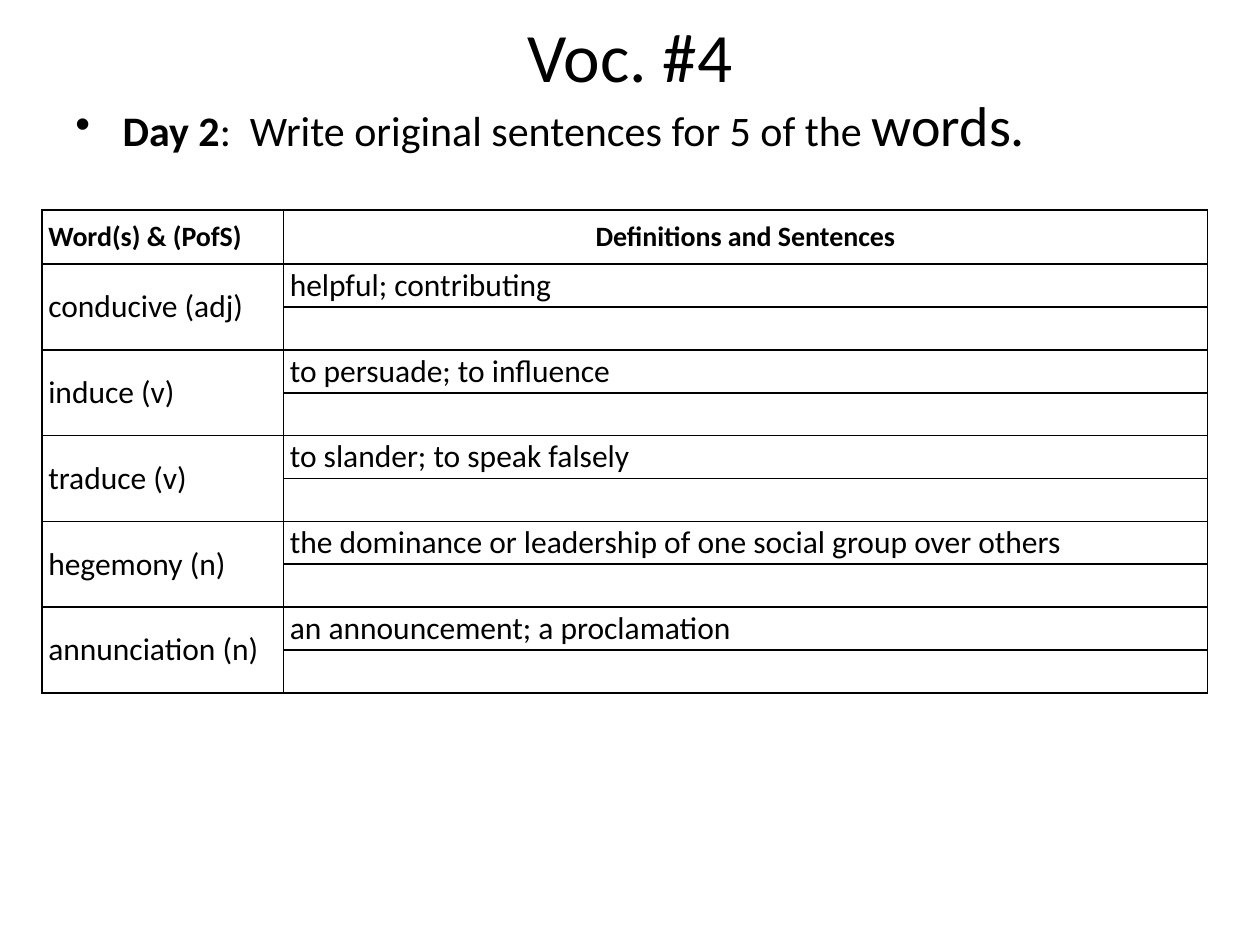
from dataclasses import dataclass

import lxml.etree
import pptx
import pptx.dml.color
import pptx.enum.text
import pptx.oxml
import pptx.oxml.ns
import pptx.util

FONT = "Calibri"
BLACK = "000000"
ALIGN = pptx.enum.text.PP_ALIGN
ANCHOR = pptx.enum.text.MSO_ANCHOR
HEADER_HEIGHT = 31
ROW_HEIGHT = 24.5
COLUMN_WIDTHS = (138, 528)


@dataclass
class Span:
    text: str
    size: float
    bold: bool = False


@dataclass
class Entry:
    word: str
    definition: str


ENTRIES = [
    Entry("conducive (adj)", "helpful; contributing"),
    Entry("induce (v)", "to persuade; to influence"),
    Entry("traduce (v)", "to slander; to speak falsely"),
    Entry("hegemony (n)", "the dominance or leadership of one social group over others"),
    Entry("annunciation (n)", "an announcement; a proclamation"),
]


def color(value: str) -> pptx.dml.color.RGBColor:
    return pptx.dml.color.RGBColor.from_string(value)


def place(box, left: float, top: float, width: float, height: float) -> None:
    box.left, box.top = pptx.util.Pt(left), pptx.util.Pt(top)
    box.width, box.height = pptx.util.Pt(width), pptx.util.Pt(height)


def add_spans(para, spans: list[Span], align=ALIGN.LEFT) -> None:
    para.alignment = align
    for span in spans:
        run = para.add_run()
        run.text = span.text
        run.font.name = FONT
        run.font.size = pptx.util.Pt(span.size)
        run.font.bold = span.bold
        run.font.color.rgb = color(BLACK)


def add_bullet(para, indent: float) -> None:
    properties = para._p.get_or_add_pPr()
    properties.set("marL", str(pptx.util.Pt(indent)))
    properties.set("indent", str(-pptx.util.Pt(indent)))
    font = lxml.etree.SubElement(properties, pptx.oxml.ns.qn("a:buFont"))
    font.set("typeface", "Arial")
    bullet = lxml.etree.SubElement(properties, pptx.oxml.ns.qn("a:buChar"))
    bullet.set("char", "•")


def format_cell(cell) -> None:
    cell.margin_left = cell.margin_right = pptx.util.Pt(3.6)
    cell.margin_top = cell.margin_bottom = 0
    cell.vertical_anchor = ANCHOR.MIDDLE
    cell.fill.background()
    properties = cell._tc.get_or_add_tcPr()
    for position, side in enumerate(("lnL", "lnR", "lnT", "lnB")):
        border = pptx.oxml.parse_xml(
            f'<a:{side} {pptx.oxml.ns.nsdecls("a")} w="{pptx.util.Pt(1)}">'
            f'<a:solidFill><a:srgbClr val="{BLACK}"/></a:solidFill></a:{side}>'
        )
        properties.insert(position, border)


def fill_cell(cell, span: Span, align=ALIGN.LEFT) -> None:
    add_spans(cell.text_frame.paragraphs[0], [span], align)


def add_title(page, text: str) -> None:
    title = page.shapes.title
    place(title, 36, 0, 648, 63)
    frame = title.text_frame
    frame.auto_size = pptx.enum.text.MSO_AUTO_SIZE.NONE
    frame.vertical_anchor = ANCHOR.MIDDLE
    add_spans(frame.paragraphs[0], [Span(text, 39.6)], ALIGN.CENTER)


def add_instruction(page, spans: list[Span]) -> None:
    box = page.shapes.add_textbox(0, 0, 0, 0)
    place(box, 36, 48, 648, 48)
    box.text_frame.word_wrap = True
    para = box.text_frame.paragraphs[0]
    para.space_before = pptx.util.Pt(2)
    add_bullet(para, 27)
    add_spans(para, spans)


def add_vocabulary(page, entries: list[Entry]) -> None:
    row_count = 1 + 2 * len(entries)
    height = HEADER_HEIGHT + ROW_HEIGHT * (row_count - 1)
    frame = page.shapes.add_table(
        row_count, len(COLUMN_WIDTHS), pptx.util.Pt(24), pptx.util.Pt(120),
        pptx.util.Pt(sum(COLUMN_WIDTHS)), pptx.util.Pt(height),
    )
    table = frame.table
    table.first_row = table.horz_banding = False
    for column, width in zip(table.columns, COLUMN_WIDTHS):
        column.width = pptx.util.Pt(width)
    for index, row in enumerate(table.rows):
        row.height = pptx.util.Pt(ROW_HEIGHT if index else HEADER_HEIGHT)
    for cell in table.iter_cells():
        format_cell(cell)
    fill_cell(table.cell(0, 0), Span("Word(s) & (PofS)", 16, True))
    fill_cell(table.cell(0, 1), Span("Definitions and Sentences", 16, True), ALIGN.CENTER)
    for index, entry in enumerate(entries):
        top = 1 + 2 * index
        word_cell = table.cell(top, 0)
        word_cell.merge(table.cell(top + 1, 0))
        fill_cell(word_cell, Span(entry.word, 18))
        fill_cell(table.cell(top, 1), Span(entry.definition, 18))


def main() -> None:
    deck = pptx.Presentation()
    deck.slide_width, deck.slide_height = pptx.util.Pt(720), pptx.util.Pt(540)
    page = deck.slides.add_slide(deck.slide_layouts.get_by_name("Title Only"))
    add_title(page, "Voc. #4")
    add_instruction(page, [
        Span("Day 2", 24, True),
        Span(":  Write original sentences for 5 of the ", 24),
        Span("words.", 32),
    ])
    add_vocabulary(page, ENTRIES)
    deck.save("out.pptx")


if __name__ == "__main__":
    main()
